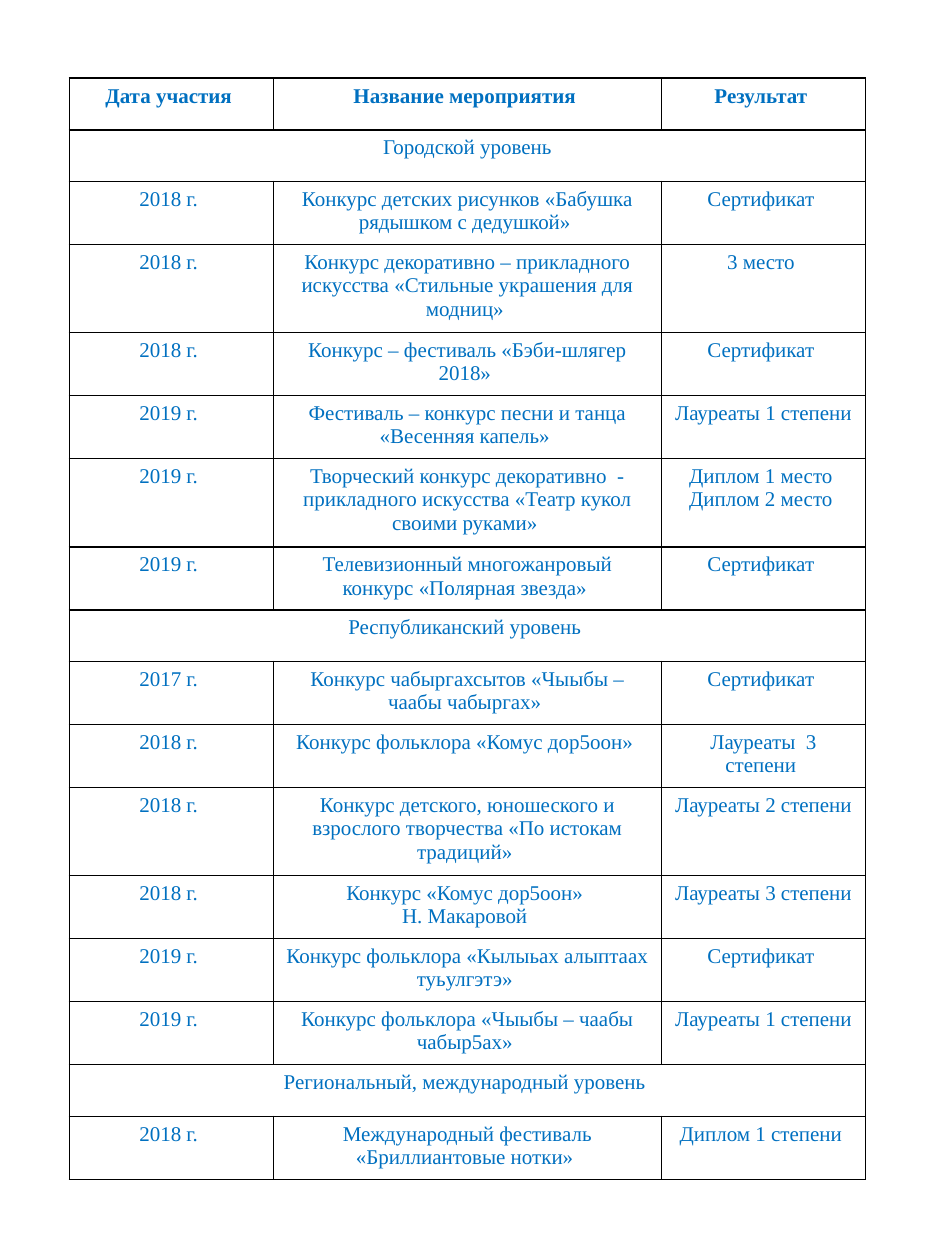
"""Build a one-page table of contest results grouped by level."""
from dataclasses import dataclass

from lxml import etree
from pptx import Presentation
from pptx.dml.color import RGBColor
from pptx.enum.text import PP_ALIGN
from pptx.oxml.ns import qn
from pptx.util import Inches, Pt

CENTER = PP_ALIGN.CENTER


@dataclass(frozen=True)
class Theme:
    font: str = "Times New Roman"
    size: int = 12
    text: str = "0070C0"
    border: str = "000000"
    border_width: int = 1


@dataclass(frozen=True)
class Row:
    cells: tuple[str, ...]
    lines: int = 2
    bold: bool = False

    @property
    def height(self) -> float:
        return max(0.41, 0.1 + 0.2 * self.lines)


THEME = Theme()
LEFT, TOP = 0.55, 0.62
COLUMNS = (1.62, 3.08, 1.62)
ROWS = (
    Row(("Дата участия", "Название мероприятия", "Результат"), 1, True),
    Row((" Городской уровень",), 1),
    Row(("2018 г.", "Конкурс детских рисунков «Бабушка рядышком с дедушкой»", "Сертификат")),
    Row(("2018 г.", "Конкурс декоративно – прикладного искусства «Стильные украшения для модниц»",
         "3 место"), 3),
    Row(("2018 г.", "Конкурс – фестиваль «Бэби-шлягер 2018»", "Сертификат")),
    Row(("2019 г.", "Фестиваль – конкурс песни и танца «Весенняя капель»", "Лауреаты 1 степени")),
    Row(("2019 г.", "Творческий конкурс декоративно  - прикладного искусства "
         "«Театр кукол своими руками»", "Диплом 1 место\nДиплом 2 место"), 3),
    Row(("2019 г.", "Телевизионный многожанровый конкурс «Полярная звезда»", "Сертификат")),
    Row(("Республиканский уровень",), 1),
    Row(("2017 г.", "Конкурс чабыргахсытов «Чыыбы – чаабы чабыргах»", "Сертификат")),
    Row(("2018 г.", "Конкурс фольклора «Комус дор5оон»", "Лауреаты  3 степени")),
    Row(("2018 г.", "Конкурс детского, юношеского и взрослого творчества «По истокам традиций»",
         "Лауреаты 2 степени"), 3),
    Row(("2018 г.", "Конкурс «Комус дор5оон»\nН. Макаровой", "Лауреаты 3 степени")),
    Row(("2019 г.", "Конкурс фольклора «Кылыьах алыптаах туьулгэтэ»", "Сертификат")),
    Row(("2019 г.", "Конкурс фольклора «Чыыбы – чаабы чабыр5ах»", "Лауреаты 1 степени")),
    Row(("Региональный, международный уровень",), 1),
    Row(("2018 г.", "Международный фестиваль «Бриллиантовые нотки»", "Диплом 1 степени")),
)


def put_text(tf, text: str, *, bold: bool = False, size: int = THEME.size,
             color: str = THEME.text, align=CENTER) -> None:
    """Write each line of text as a formatted paragraph."""
    for i, line in enumerate(text.split("\n")):
        p = tf.add_paragraph() if i else tf.paragraphs[0]
        p.alignment = align
        r = p.add_run()
        r.text = f"{line} "
        r.font.name = THEME.font
        r.font.size = Pt(size)
        r.font.bold = bold
        r.font.color.rgb = RGBColor.from_string(color)


def style_cell(cell) -> None:
    """Give a cell solid borders and no fill."""
    tc_pr = cell._tc.get_or_add_tcPr()
    for side in ("a:lnL", "a:lnR", "a:lnT", "a:lnB"):
        ln = etree.SubElement(tc_pr, qn(side), w=str(Pt(THEME.border_width)))
        fill = etree.SubElement(ln, qn("a:solidFill"))
        etree.SubElement(fill, qn("a:srgbClr"), val=THEME.border)
    cell.fill.background()


def add_results(s, rows: tuple[Row, ...]) -> None:
    """Add the results table, merging rows that hold a single heading."""
    height = sum(row.height for row in rows)
    frame = s.shapes.add_table(len(rows), len(COLUMNS), Inches(LEFT), Inches(TOP),
                               Inches(sum(COLUMNS)), Inches(height))
    table = frame.table
    table.first_row = table.horz_banding = False
    for column, width in zip(table.columns, COLUMNS):
        column.width = Inches(width)
    for i, row in enumerate(rows):
        table.rows[i].height = Inches(row.height)
        for cell in table.rows[i].cells:
            style_cell(cell)
        if len(row.cells) == 1:
            table.cell(i, 0).merge(table.cell(i, len(COLUMNS) - 1))
        for j, text in enumerate(row.cells):
            put_text(table.cell(i, j).text_frame, text, bold=row.bold)


def main() -> None:
    """Create and save the presentation."""
    prs = Presentation()
    prs.slide_width, prs.slide_height = Inches(7.5), Inches(10)
    s = prs.slides.add_slide(prs.slide_layouts[6])
    add_results(s, ROWS)
    prs.save("out.pptx")


if __name__ == "__main__":
    main()
